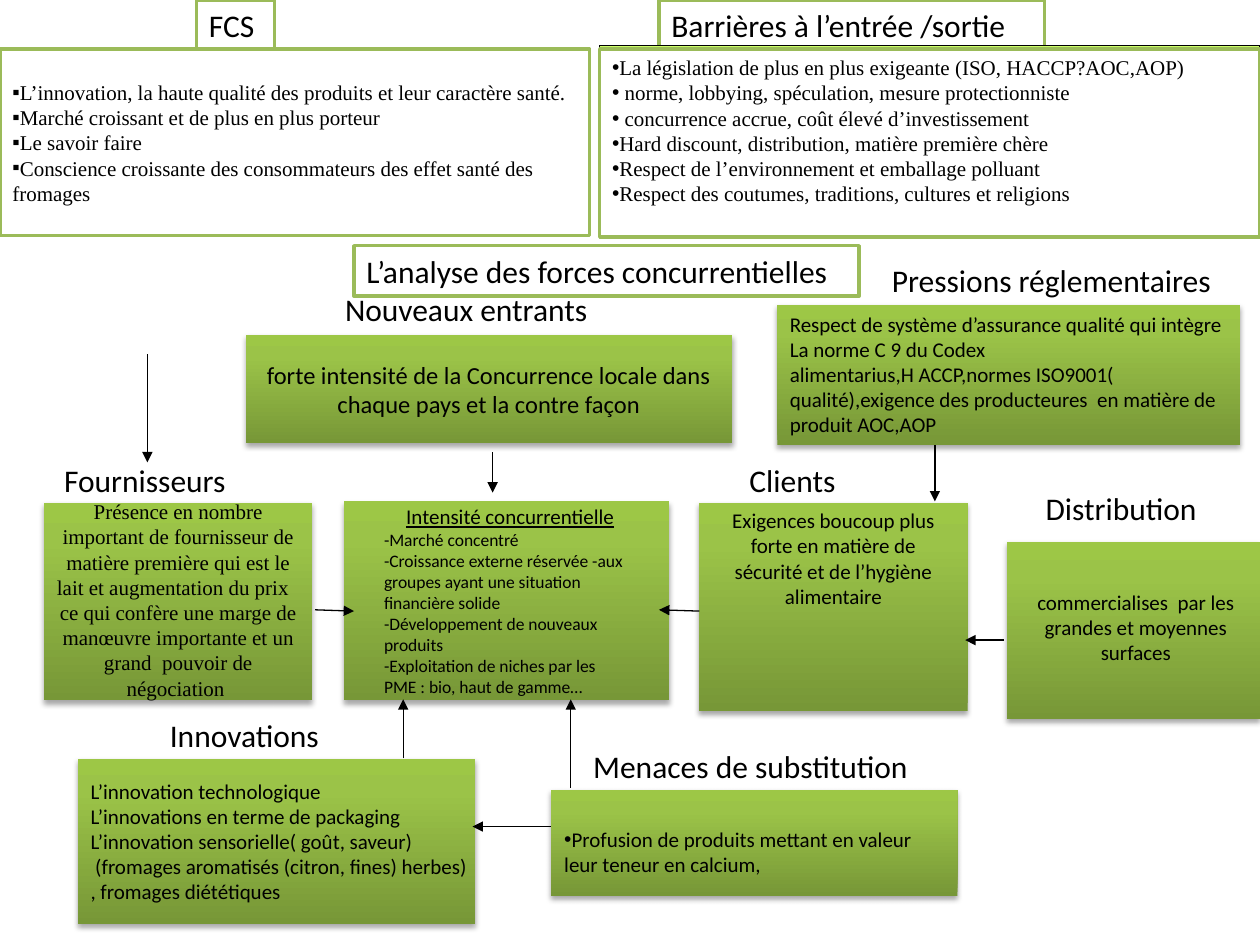
from lxml.etree import SubElement
from pptx import Presentation
from pptx.dml.color import RGBColor
from pptx.enum.shapes import MSO_CONNECTOR, MSO_SHAPE
from pptx.enum.text import MSO_ANCHOR, PP_ALIGN
from pptx.oxml.ns import qn
from pptx.util import Inches, Pt

COLUMNS, ROWS = 10, 7.5
UNIT = Inches(1)
BLACK, WHITE, GREEN = "000000", "FFFFFF", "9BBB59"
GRADIENT = [(0, "779737"), (80, "9BC348"), (100, "9DC746")]
SERIF = "Times New Roman"
TOP, MIDDLE = MSO_ANCHOR.TOP, MSO_ANCHOR.MIDDLE
LEFT, CENTER = PP_ALIGN.LEFT, PP_ALIGN.CENTER

TITLES = [
    ("L’analyse des forces concurrentielles", (2.81, 1.95, 4.01, 0.4)),
    ("FCS", (1.56, 0, 0.62, 0.4)),
    ("Barrières à l’entrée /sortie", (5.23, 0, 3.06, 0.4)),
]

SUCCESS_FACTORS = [
    "L’innovation, la haute qualité des produits et leur caractère santé.",
    "Marché croissant et de plus en plus porteur",
    "Le savoir faire",
    "Conscience croissante des consommateurs des effet santé des\vfromages",
]
BARRIERS = [
    "La législation de plus en plus exigeante (ISO, HACCP?AOC,AOP)",
    " norme, lobbying, spéculation, mesure protectionniste",
    " concurrence accrue, coût élevé d’investissement",
    "Hard discount, distribution, matière première chère",
    "Respect de l’environnement et emballage polluant",
    "Respect des coutumes, traditions, cultures et religions",
]
PANELS = [
    (SUCCESS_FACTORS, (0, 0.39, 4.68, 1.48), "▪", 0.05),
    (BARRIERS, (4.76, 0.39, 5.24, 1.49), "•", 0.25),
]

INNOVATIONS = [
    "L’innovation technologique",
    "L’innovations en terme de packaging",
    "L’innovation sensorielle( goût, saveur)",
    " (fromages aromatisés (citron, fines) herbes)",
    ", fromages diététiques",
]
NEW_ENTRANTS = [
    " forte intensité de la Concurrence locale dans ",
    "chaque pays et la contre façon",
]
REGULATION = [
    "Respect de système d’assurance qualité qui intègre La norme C 9 du Codex",
    "alimentarius,H ACCP,normes ISO9001(",
    "qualité),exigence des producteures  en matière de produit AOC,AOP",
]
CARDS = [
    ((7.99, 4.3, 2.01, 1.41), [], {}),
    ((0.62, 6.02, 3.15, 1.31), INNOVATIONS, {"anchor": MIDDLE, "right": 0}),
    ((2.73, 3.98, 2.58, 1.58), [], {}),
    ((1.95, 2.66, 3.86, 0.86), NEW_ENTRANTS,
     {"anchor": MIDDLE, "align": CENTER, "size": 14}),
    ((4.37, 6.27, 3.23, 0.84), [], {}),
    ((0.35, 3.99, 2.13, 1.57), [], {}),
    ((5.55, 3.99, 2.13, 1.65), [], {}),
    ((6.17, 2.42, 3.67, 1.11), REGULATION, {}),
]

LABELS = [
    ("Clients", (5.85, 3.61, 0.97, 0.4)),
    ("Fournisseurs", (0.41, 3.61, 1.65, 0.4)),
    ("Nouveaux entrants", (2.64, 2.25, 2.3, 0.4)),
    ("Menaces de substitution", (4.61, 5.88, 2.9, 0.4)),
    ("Pressions réglementaires", (6.98, 2.02, 3.02, 0.4)),
    ("Innovations", (1.25, 5.63, 1.44, 0.4)),
    ("Distribution", (8.2, 3.83, 1.56, 0.4)),
]

RIVALRY = [
    "-Marché concentré",
    "-Croissance externe réservée -aux groupes ayant une situation financière solide",
    "-Développement de nouveaux produits",
    "-Exploitation de niches par les PME : bio, haut de gamme…",
]
NOTES = [
    (["Présence en nombre important de fournisseur de matière première qui est le "
      "lait et augmentation du prix   ce qui confère une marge de manœuvre "
      "importante et un grand  pouvoir de négociation "],
     (0.35, 3.91, 2.13, 1.7), {"align": CENTER, "font": SERIF}),
    (["Exigences boucoup plus forte en matière de sécurité et de l’hygiène alimentaire"],
     (5.63, 3.98, 1.97, 1.67), {"align": CENTER}),
    (["commercialises  par les grandes et moyennes surfaces"],
     (8.03, 4.63, 1.97, 1), {"align": CENTER}),
    (["Profusion de produits mettant en valeur leur teneur en calcium,"],
     (4.38, 6.51, 3.2, 0.5), {"bullet": "•"}),
    (["Intensité concurrentielle"], (2.95, 3.95, 2.2, 0.3),
     {"align": CENTER, "underline": True}),
    (RIVALRY, (2.95, 4.15, 2.2, 1.5), {"size": 10}),
]

ARROWS = [
    (2.5, 4.84, 2.81, 4.85),
    (3.91, 3.59, 3.91, 3.91),
    (3.2, 6.02, 3.2, 5.55),
    (5.55, 4.85, 5.23, 4.84),
    (7.42, 3.53, 7.42, 3.98),
    (4.53, 6.25, 4.53, 5.55),
    (4.37, 6.56, 3.75, 6.56),
    (1.17, 2.81, 1.17, 3.67),
    (7.97, 5.08, 7.66, 5.08),
]


def color(value):
    return RGBColor.from_string(value)


def lengths(values):
    return [round(value * UNIT) for value in values]


def element(parent, tag, **attributes):
    return SubElement(parent, qn(tag), {k: str(v) for k, v in attributes.items()})


def write(shape, lines, size=12, font="Calibri", align=LEFT, anchor=TOP,
          bullet=None, underline=False, bottom=0.05, right=0.1):
    frame = shape.text_frame
    settings = {"word_wrap": True, "vertical_anchor": anchor,
                "margin_bottom": Inches(bottom), "margin_right": Inches(right)}
    for name, value in settings.items():
        setattr(frame, name, value)
    frame.text = "\n".join(lines)
    for paragraph in frame.paragraphs:
        paragraph.alignment = align
        if bullet:
            properties = paragraph._p.get_or_add_pPr()
            element(properties, "a:buFont", typeface="Arial")
            element(properties, "a:buChar", char=bullet)
        for run in paragraph.runs:
            styles = {"size": Pt(size), "name": font, "underline": underline}
            for name, value in styles.items():
                setattr(run.font, name, value)
            run.font.color.rgb = color(BLACK)


def add_box(slide, place, fill=WHITE, line=GREEN, weight=2):
    shape = slide.shapes.add_shape(MSO_SHAPE.RECTANGLE, *lengths(place))
    shape.shadow.inherit = False
    shape.fill.solid()
    shape.fill.fore_color.rgb = color(fill)
    shape.line.color.rgb = color(line)
    shape.line.width = Pt(weight)
    return shape


def add_card(slide, place):
    shape = slide.shapes.add_shape(MSO_SHAPE.RECTANGLE, *lengths(place))
    shape.shadow.inherit = False
    shape.line.fill.background()
    shape.fill.gradient()
    shape.fill.gradient_angle = 90
    properties = shape._element.spPr
    stops = properties.find(".//" + qn("a:gsLst"))
    for stop in list(stops):
        stops.remove(stop)
    for position, value in GRADIENT:
        stop = element(stops, "a:gs", pos=position * 1000)
        element(stop, "a:srgbClr", val=value)
    shadow = element(properties.find(qn("a:effectLst")), "a:outerShdw",
                     blurRad=Pt(3.1), dist=Pt(1.8), dir=5400000, rotWithShape=0)
    element(element(shadow, "a:srgbClr", val=BLACK), "a:alpha", val=35000)
    return shape


def add_arrow(slide, ends):
    arrow = slide.shapes.add_connector(MSO_CONNECTOR.STRAIGHT, *lengths(ends))
    arrow.line.color.rgb = color(BLACK)
    arrow.line.width = Pt(0.75)
    element(arrow.line._get_or_add_ln(), "a:tailEnd", type="triangle")
    element(arrow._element.spPr, "a:effectLst")


def main():
    presentation = Presentation()
    presentation.slide_width, presentation.slide_height = lengths((COLUMNS, ROWS))
    slide = presentation.slides.add_slide(presentation.slide_layouts[6])
    for text, place in TITLES:
        write(add_box(slide, place), [text], size=18)
    add_box(slide, (4.76, 0.36, 5.24, 1.49), "CCFF66", BLACK, 0.75)
    for lines, place, bullet, bottom in PANELS:
        write(add_box(slide, place), lines, font=SERIF, anchor=MIDDLE,
              bullet=bullet, bottom=bottom)
    for place, lines, style in CARDS:
        card = add_card(slide, place)
        if lines:
            write(card, lines, **style)
    for ends in ARROWS:
        add_arrow(slide, ends)
    labels = [([text], place, {"size": 18}) for text, place in LABELS]
    for lines, place, style in labels + NOTES:
        write(slide.shapes.add_textbox(*lengths(place)), lines, **style)
    presentation.save("out.pptx")


if __name__ == "__main__":
    main()
